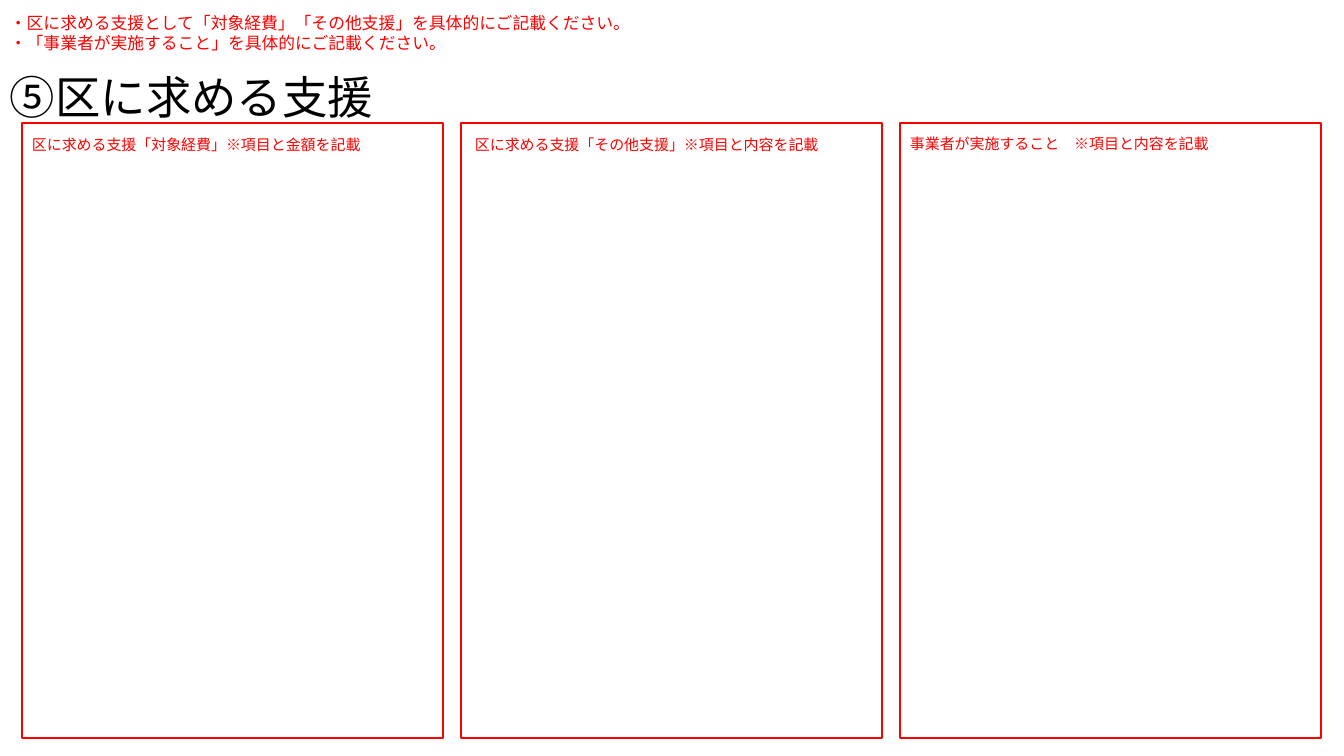
from dataclasses import dataclass

from lxml.etree import SubElement
from pptx import Presentation
from pptx.dml.color import RGBColor
from pptx.enum.shapes import MSO_SHAPE
from pptx.enum.text import MSO_ANCHOR
from pptx.oxml.ns import qn
from pptx.util import Emu, Pt

EMU_PER_PX = 914400 / 100.8


@dataclass(frozen=True)
class Theme:
    font: str = "Noto Sans CJK JP"
    ink: RGBColor = RGBColor(0, 0, 0)
    red: RGBColor = RGBColor(255, 0, 0)
    paper: RGBColor = RGBColor(255, 255, 255)
    title: float = 32.4
    note: float = 12
    label: float = 10.7
    border: float = 1.5


def px(n):
    return Emu(round(n * EMU_PER_PX))


class SlideBuilder:
    def __init__(self, slide, theme):
        self.slide = slide
        self.theme = theme

    def text(self, box, lines, size, color, spacing=None):
        """Place one vertically centred paragraph per line."""
        tf = self.slide.shapes.add_textbox(*map(px, box)).text_frame
        tf.word_wrap = True
        tf.vertical_anchor = MSO_ANCHOR.MIDDLE
        for i, line in enumerate(lines):
            p = tf.add_paragraph() if i else tf.paragraphs[0]
            if spacing:
                p.line_spacing = spacing
            r = p.add_run()
            r.text = line
            r.font.size = Pt(size)
            r.font.color.rgb = color
            r.font.name = self.theme.font
            ea = SubElement(r.font._element, qn("a:ea"))
            ea.set("typeface", self.theme.font)

    def frame(self, box):
        sp = self.slide.shapes.add_shape(MSO_SHAPE.RECTANGLE, *map(px, box))
        sp.shadow.inherit = False
        sp.fill.solid()
        sp.fill.fore_color.rgb = self.theme.paper
        sp.line.color.rgb = self.theme.red
        sp.line.width = Pt(self.theme.border)


def main():
    prs = Presentation()
    prs.slide_width, prs.slide_height = px(1344), px(756)
    theme = Theme()
    s = SlideBuilder(prs.slides.add_slide(prs.slide_layouts[6]), theme)

    s.text((0, 53, 1159, 70), ["⑤区に求める支援"], theme.title, theme.ink, 1.3)

    # Label text, with its shift from the column's left edge, top and width
    columns = [
        ("区に求める支援「対象経費」※項目と金額を記載", 0, 122, 410),
        ("区に求める支援「その他支援」※項目と内容を記載", 4, 122, 385),
        ("事業者が実施すること　※項目と内容を記載", 0, 121, 385),
    ]
    left, pitch = 22, 439
    for i, (label, shift, top, width) in enumerate(columns):
        x = left + i * pitch
        s.frame((x, 123, 421, 615))
        s.text((x + shift, top, width, 36), [label], theme.label, theme.red, 1.5)

    s.text((0, -12, 1333, 89), [
        "・区に求める支援として「対象経費」「その他支援」を具体的にご記載ください。",
        "・「事業者が実施すること」を具体的にご記載ください。",
    ], theme.note, theme.red)

    prs.save("out.pptx")


if __name__ == "__main__":
    main()
